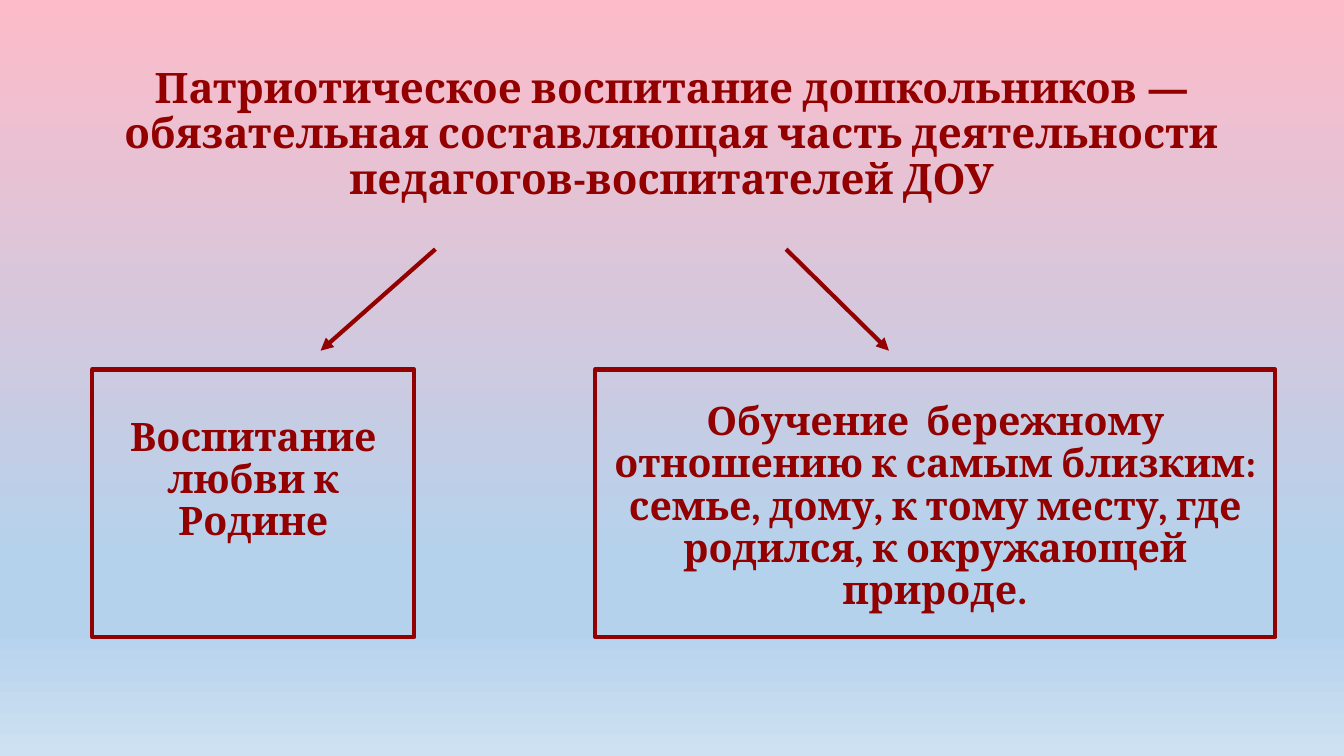
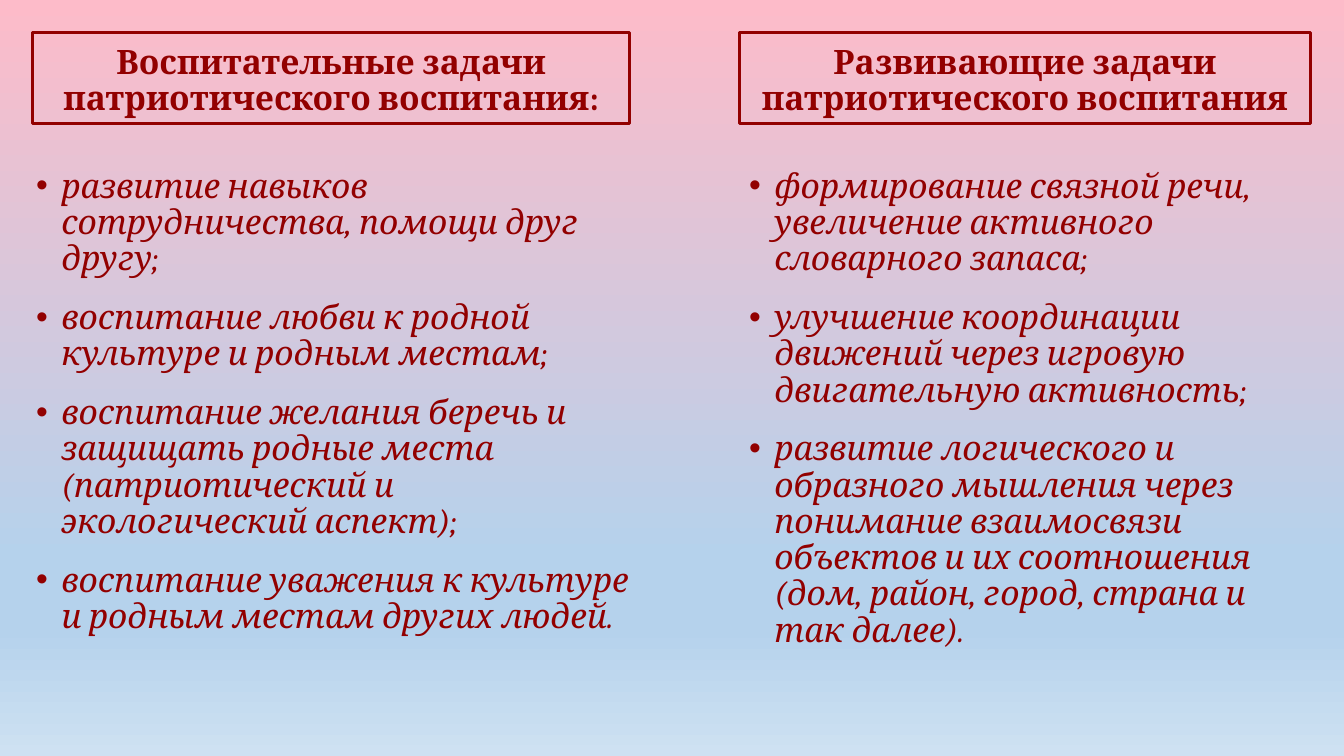
from dataclasses import dataclass

from lxml import etree
from pptx import Presentation
from pptx.dml.color import RGBColor
from pptx.enum import shapes, text
from pptx.oxml import ns
from pptx.util import Pt


@dataclass(frozen=True)
class Theme:
    ink: RGBColor = RGBColor(0x92, 0x00, 0x00)
    # Background stops, top to bottom: position in percent, colour
    sky: tuple = ((0, "FDBBC9"), (74, "B5D2EC"), (83, "B5D2EC"), (100, "CEE1F2"))
    font: str = "Cambria"
    plain_font: str = "Calibri"
    title_size: int = 30
    box_size: int = 28
    list_size: int = 24
    thick: float = 3
    thin: float = 2.25
    line_spacing: float = 0.9
    inset: float = 3.6
    indent: int = 18


THEME = Theme()


# --- Shared parts ---
def add_child(parent, tag, **attributes):
    return etree.SubElement(parent, ns.qn(tag), attributes)


def paint_background(master):
    fill = master.background.fill
    fill.gradient()
    fill.gradient_angle = 270
    stops = next(master.element.iter(ns.qn("a:gsLst")))
    for stop in list(stops):
        stops.remove(stop)
    for percent, colour in THEME.sky:
        stop = add_child(stops, "a:gs", pos=str(percent * 1000))
        add_child(stop, "a:srgbClr", val=colour)


def add_run(paragraph, words, size, font=THEME.font, bold=False, italic=False):
    run = paragraph.add_run()
    run.text = words
    run.font.name = font
    run.font.size = Pt(size)
    run.font.bold = bold
    run.font.italic = italic
    run.font.color.rgb = THEME.ink


def next_paragraph(frame, first, align, before=0, after=0):
    paragraph = frame.paragraphs[0] if first else frame.add_paragraph()
    paragraph.alignment = align
    paragraph.line_spacing = THEME.line_spacing
    paragraph.space_before = Pt(before)
    paragraph.space_after = Pt(after)
    return paragraph


def set_frame(shape, anchor, top_inset=THEME.inset):
    frame = shape.text_frame
    frame.word_wrap = True
    frame.vertical_anchor = anchor
    frame.margin_top = Pt(top_inset)
    return frame


def write_centred(frame, paragraphs, size):
    """Each paragraph is a list of (words, font) runs."""
    for index, runs in enumerate(paragraphs):
        paragraph = next_paragraph(frame, index == 0, text.PP_ALIGN.CENTER)
        for words, font in runs:
            add_run(paragraph, words, size, font, bold=True)


# --- Kinds of element ---
def add_title(slide, words, place):
    shape = slide.shapes.add_textbox(*map(Pt, place))
    frame = set_frame(shape, text.MSO_ANCHOR.MIDDLE)
    write_centred(frame, [[(words, THEME.font)]], THEME.title_size)


def add_box(slide, paragraphs, place, size, weight, anchor, top_inset=THEME.inset):
    shape = slide.shapes.add_shape(shapes.MSO_SHAPE.RECTANGLE, *map(Pt, place))
    shape.shadow.inherit = False
    shape.fill.background()
    shape.line.color.rgb = THEME.ink
    shape.line.width = Pt(weight)
    write_centred(set_frame(shape, anchor, top_inset), paragraphs, size)


def add_arrow(slide, start, end):
    connector = slide.shapes.add_connector(
        shapes.MSO_CONNECTOR.STRAIGHT, *map(Pt, start + end))
    connector.line.color.rgb = THEME.ink
    connector.line.width = Pt(THEME.thick)
    add_child(connector.line._get_or_add_ln(), "a:tailEnd", type="triangle")
    add_child(connector._element.spPr, "a:effectLst")


def add_bullets(slide, items, place):
    shape = slide.shapes.add_textbox(*map(Pt, place))
    frame = set_frame(shape, text.MSO_ANCHOR.TOP)
    for index, item in enumerate(items):
        paragraph = next_paragraph(frame, index == 0, text.PP_ALIGN.LEFT, 10, 6)
        properties = paragraph._p.get_or_add_pPr()
        properties.set("marL", str(Pt(THEME.indent)))
        properties.set("indent", str(-Pt(THEME.indent)))
        add_child(properties, "a:buFont", typeface="Arial")
        add_child(properties, "a:buChar", char="•")
        add_run(paragraph, item, THEME.list_size, italic=True)


# --- Slides ---
def build_overview(slide):
    add_title(
        slide,
        "Патриотическое воспитание дошкольников — обязательная составляющая "
        "часть деятельности педагогов-воспитателей ДОУ",
        (66, 29, 828, 135))

    box_top, box_height = 264, 191
    love = [[("Воспитание", THEME.font)], [("любви к Родине", THEME.font)]]
    care = [[
        ("Обучение  бережному отношению к самым близким: семье, дому, "
         "к тому месту, где родился, к окружающей природе", THEME.font),
        (".", THEME.plain_font),
    ]]
    for paragraphs, left, width, top_inset in ((love, 66, 230, 34),
                                               (care, 425, 486, 23)):
        add_box(slide, paragraphs, (left, box_top, width, box_height),
                THEME.box_size, THEME.thick, text.MSO_ANCHOR.TOP, top_inset)

    for start_x, end_x in ((311, 229), (561.5, 635)):
        add_arrow(slide, (start_x, 178), (end_x, 250.5))


def build_tasks(slide):
    # Heading, heading (left, width), list (left, width), items
    columns = (
        ("Воспитательные задачи патриотического воспитания:",
         (23, 427), (18.7, 439),
         ("развитие навыков сотрудничества, помощи друг другу;",
          "воспитание любви к родной культуре и родным местам;",
          "воспитание желания беречь и защищать родные места "
          "(патриотический и экологический аспект);",
          "воспитание уважения к культуре и родным местам других людей.")),
        ("Развивающие задачи патриотического воспитания",
         (528, 408), (528, 408),
         ("формирование связной речи, увеличение активного словарного запаса;",
          "улучшение координации движений через игровую двигательную активность;",
          "развитие логического и образного мышления через понимание "
          "взаимосвязи объектов и их соотношения (дом, район, город, страна "
          "и так далее).")),
    )
    for heading, (box_left, box_width), (list_left, list_width), items in columns:
        add_box(slide, [[(heading, THEME.font)]], (box_left, 23, box_width, 65),
                THEME.list_size, THEME.thin, text.MSO_ANCHOR.BOTTOM)
        add_bullets(slide, items, (list_left, 117.4, list_width, 402))


def main():
    presentation = Presentation()
    presentation.slide_width, presentation.slide_height = Pt(960), Pt(540)
    paint_background(presentation.slide_master)
    blank = presentation.slide_layouts[6]
    for build in (build_overview, build_tasks):
        build(presentation.slides.add_slide(blank))
    presentation.save("out.pptx")


if __name__ == "__main__":
    main()
